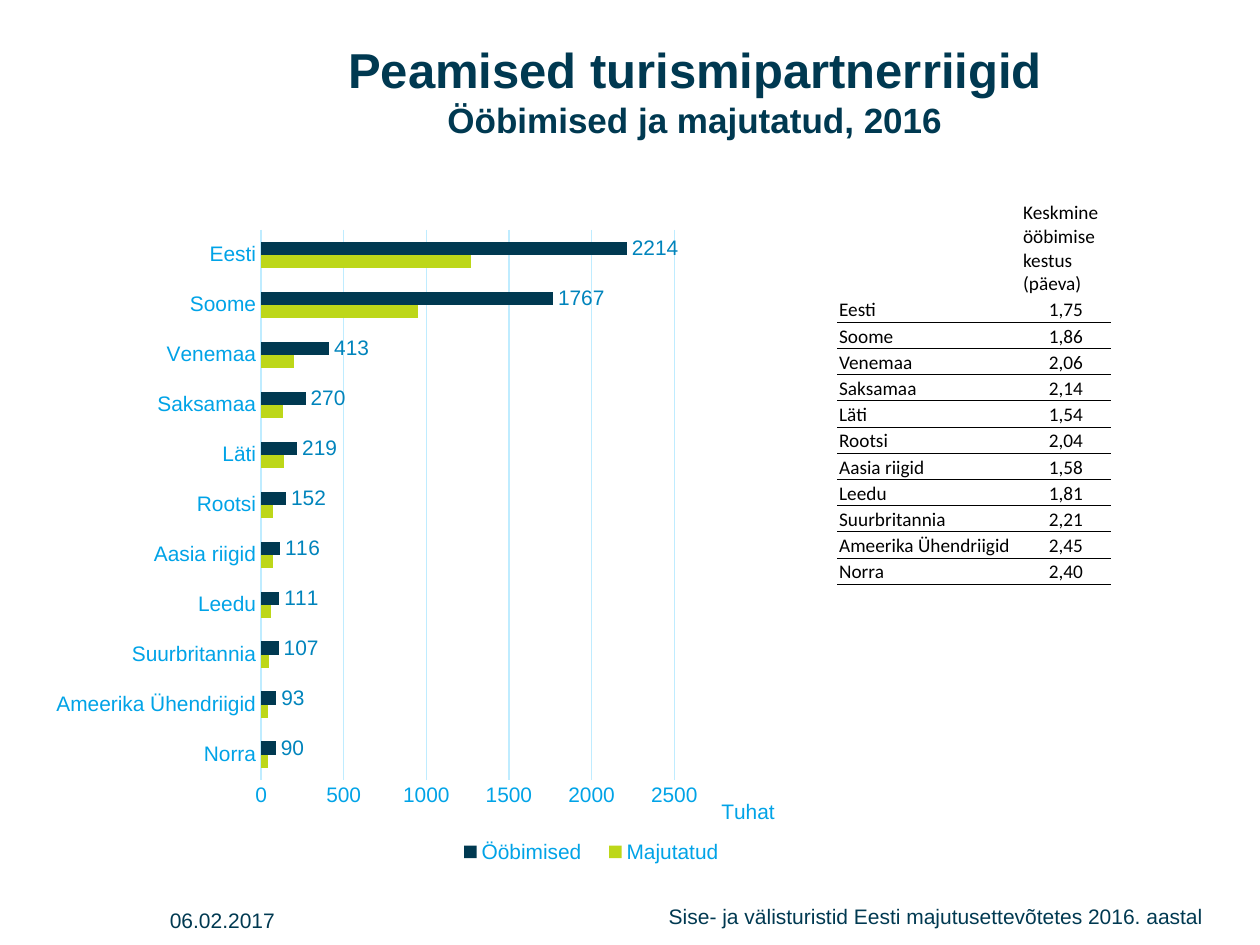
from dataclasses import dataclass
from typing import NamedTuple

from lxml import etree
from pptx import Presentation
from pptx.chart.data import CategoryChartData
from pptx.dml.color import RGBColor
from pptx.enum import chart as ch, text as tx
from pptx.oxml import parse_xml
from pptx.oxml.ns import nsdecls, qn
from pptx.util import Inches, Pt


@dataclass(frozen=True)
class Theme:
    navy: str = "003951"
    lime: str = "BDD719"
    sky: str = "00A3E7"
    label: str = "0084BC"
    grid: str = "BFECFF"
    black: str = "000000"
    body_font: str = "Arial"
    table_font: str = "Calibri"
    title: int = 28
    subtitle: int = 20
    body: int = 12
    table: int = 11


class Box(NamedTuple):
    left: float
    top: float
    width: float
    height: float

    def lengths(self) -> list:
        return [Inches(value) for value in self]


class Country(NamedTuple):
    name: str
    nights: int
    guests: int
    stay: str


@dataclass(frozen=True)
class Caption:
    box: Box
    lines: tuple[tuple[str, int], ...]
    align: tx.PP_ALIGN
    anchor: tx.MSO_ANCHOR
    margin: float = 0
    bold: bool = False
    spacing: float = 1.0


THEME = Theme()
COUNTRIES = [
    Country("Eesti", 2214, 1270, "1,75"),
    Country("Soome", 1767, 950, "1,86"),
    Country("Venemaa", 413, 200, "2,06"),
    Country("Saksamaa", 270, 130, "2,14"),
    Country("Läti", 219, 140, "1,54"),
    Country("Rootsi", 152, 70, "2,04"),
    Country("Aasia riigid", 116, 70, "1,58"),
    Country("Leedu", 111, 60, "1,81"),
    Country("Suurbritannia", 107, 50, "2,21"),
    Country("Ameerika Ühendriigid", 93, 40, "2,45"),
    Country("Norra", 90, 40, "2,40"),
]
CAPTIONS = [
    Caption(Box(2.72, 0.36, 5.59, 0.71),
            (("Peamised turismipartnerriigid", THEME.title),
             ("Ööbimised ja majutatud, 2016", THEME.subtitle)),
            tx.PP_ALIGN.CENTER, tx.MSO_ANCHOR.MIDDLE, bold=True),
    Caption(Box(4.67, 7.21, 4.88, 0.19),
            (("Sise- ja välisturistid Eesti majutusettevõtetes 2016. aastal", THEME.body),),
            tx.PP_ALIGN.RIGHT, tx.MSO_ANCHOR.TOP, spacing=0.8),
    Caption(Box(1.25, 7.1, 2.33, 0.4), (("06.02.2017", THEME.body),),
            tx.PP_ALIGN.LEFT, tx.MSO_ANCHOR.MIDDLE, margin=0.1),
]


def style_font(font, size: int, color: str, name: str = THEME.body_font, bold: bool = False) -> None:
    for key, value in {"size": Pt(size), "name": name, "bold": bold}.items():
        setattr(font, key, value)
    font.color.rgb = RGBColor.from_string(color)


def add_caption(slide, caption: Caption) -> None:
    frame = slide.shapes.add_textbox(*caption.box.lengths()).text_frame
    for key, value in {"word_wrap": True, "vertical_anchor": caption.anchor,
                       "margin_left": Inches(caption.margin),
                       "margin_right": Inches(caption.margin),
                       "margin_top": Inches(caption.margin / 2),
                       "margin_bottom": Inches(caption.margin / 2)}.items():
        setattr(frame, key, value)
    paragraph = frame.paragraphs[0]
    paragraph.alignment = caption.align
    paragraph.line_spacing = caption.spacing
    for index, (words, size) in enumerate(caption.lines):
        if index:
            paragraph.add_line_break()
        run = paragraph.add_run()
        run.text = words
        style_font(run.font, size, THEME.navy, bold=caption.bold)


def place(element, inner: bool = False, **fractions: float) -> None:
    """Give a chart part a manual layout in fractions of the chart."""
    for old in element.findall(qn("c:layout")):
        element.remove(old)
    target = '<c:layoutTarget val="inner"/>' if inner else ""
    modes = "".join(f'<c:{key}Mode val="edge"/>' for key in "xy")
    sizes = "".join(f'<c:{key} val="{value}"/>' for key, value in fractions.items())
    layout = parse_xml(f'<c:layout {nsdecls("c")}><c:manualLayout>{target}{modes}{sizes}'
                       '</c:manualLayout></c:layout>')
    before = [child for child in element
              if child.tag in (qn("c:legendPos"), qn("c:legendEntry"), qn("c:tx"))]
    element.insert(len(before), layout)


def add_bars(slide, box: Box) -> None:
    upward = COUNTRIES[::-1]
    data = CategoryChartData(number_format="0")
    data.categories = [country.name for country in upward]
    data.add_series("Majutatud", [country.guests for country in upward])
    data.add_series("Ööbimised", [country.nights for country in upward])
    chart = slide.shapes.add_chart(ch.XL_CHART_TYPE.BAR_CLUSTERED, *box.lengths(), data).chart
    style_font(chart.font, THEME.body, THEME.navy)
    chart.has_title = False

    plot = chart.plots[0]
    plot.gap_width, plot.overlap, plot.vary_by_categories = 182, 0, False
    for series, color in zip(plot.series, (THEME.lime, THEME.navy)):
        series.format.fill.solid()
        series.format.fill.fore_color.rgb = RGBColor.from_string(color)
    labels = plot.series[1].data_labels
    for key, value in {"show_value": True, "number_format": "0",
                       "number_format_is_linked": False,
                       "position": ch.XL_LABEL_POSITION.OUTSIDE_END}.items():
        setattr(labels, key, value)
    style_font(labels.font, THEME.body, THEME.label)

    names, amounts = chart.category_axis, chart.value_axis
    for axis in (names, amounts):
        axis.major_tick_mark = axis.minor_tick_mark = ch.XL_TICK_MARK.NONE
        style_font(axis.tick_labels.font, THEME.body, THEME.sky)
    for key, value in {"minimum_scale": 0, "maximum_scale": 2500, "major_unit": 500,
                       "has_major_gridlines": True}.items():
        setattr(amounts, key, value)
    amounts.format.line.fill.background()
    for line in (names.format.line, amounts.major_gridlines.format.line):
        line.width = Pt(0.75)
        line.color.rgb = RGBColor.from_string(THEME.grid)

    unit = amounts.axis_title
    run = unit.text_frame.paragraphs[0].add_run()
    run.text = "Tuhat"
    style_font(run.font, THEME.body, THEME.sky)
    unit.text_frame._txBody.find(qn("a:bodyPr")).set("rot", "0")
    place(unit._element, x=0.92, y=0.86)

    chart.has_legend = True
    chart.legend.position = ch.XL_LEGEND_POSITION.BOTTOM
    chart.legend.include_in_layout = False
    style_font(chart.legend.font, THEME.body, THEME.sky)
    place(chart.legend._element, x=0.54, y=0.91, w=0.41, h=0.06)
    place(chart._chartSpace.chart.plotArea, inner=True, x=0.287, y=0.063, w=0.573, h=0.775)


def rule_cell(cell, sides: str) -> None:
    """Draw thin lines on the given sides (T, B) of a table cell."""
    properties = cell._tc.get_or_add_tcPr()
    for index, side in enumerate(sides):
        line = etree.Element(qn(f"a:ln{side}"), w=str(Pt(0.5)))
        fill = etree.SubElement(line, qn("a:solidFill"))
        etree.SubElement(fill, qn("a:srgbClr"), val=THEME.black)
        properties.insert(index, line)


def add_stays(slide, box: Box) -> None:
    rows = [("", "Keskmine ööbimise kestus (päeva)")]
    rows += [(country.name, country.stay) for country in COUNTRIES]
    table = slide.shapes.add_table(len(rows), 2, *box.lengths()).table
    table.first_row = table.horz_banding = False
    header = 1.04
    for column, width in zip(table.columns, (1.46, 0.7)):
        column.width = Inches(width)
    for index, (row, words) in enumerate(zip(table.rows, rows)):
        row.height = Inches((box.height - header) / len(COUNTRIES) if index else header)
        for position, (cell, word) in enumerate(zip(row.cells, words)):
            for key, value in {"vertical_anchor": tx.MSO_ANCHOR.BOTTOM, "margin_bottom": 0,
                               "margin_left": Inches(0.01), "margin_right": Inches(0.01),
                               "margin_top": Inches(0.01), "text": word}.items():
                setattr(cell, key, value)
            cell.fill.background()
            paragraph = cell.text_frame.paragraphs[0]
            style_font(paragraph.font, THEME.table, THEME.black, THEME.table_font)
            if index:
                paragraph.alignment = tx.PP_ALIGN.CENTER if position else tx.PP_ALIGN.LEFT
                rule_cell(cell, "TB" if index > 1 else "B")


def main() -> None:
    deck = Presentation()
    deck.slide_width, deck.slide_height = Inches(10), Inches(7.5)
    slide = deck.slides.add_slide(deck.slide_layouts[6])
    for caption in CAPTIONS:
        add_caption(slide, caption)
    add_bars(slide, Box(0.43, 1.47, 5.75, 5.63))
    add_stays(slide, Box(6.65, 1.31, 2.16, 3.33))
    deck.save("out.pptx")


if __name__ == "__main__":
    main()
